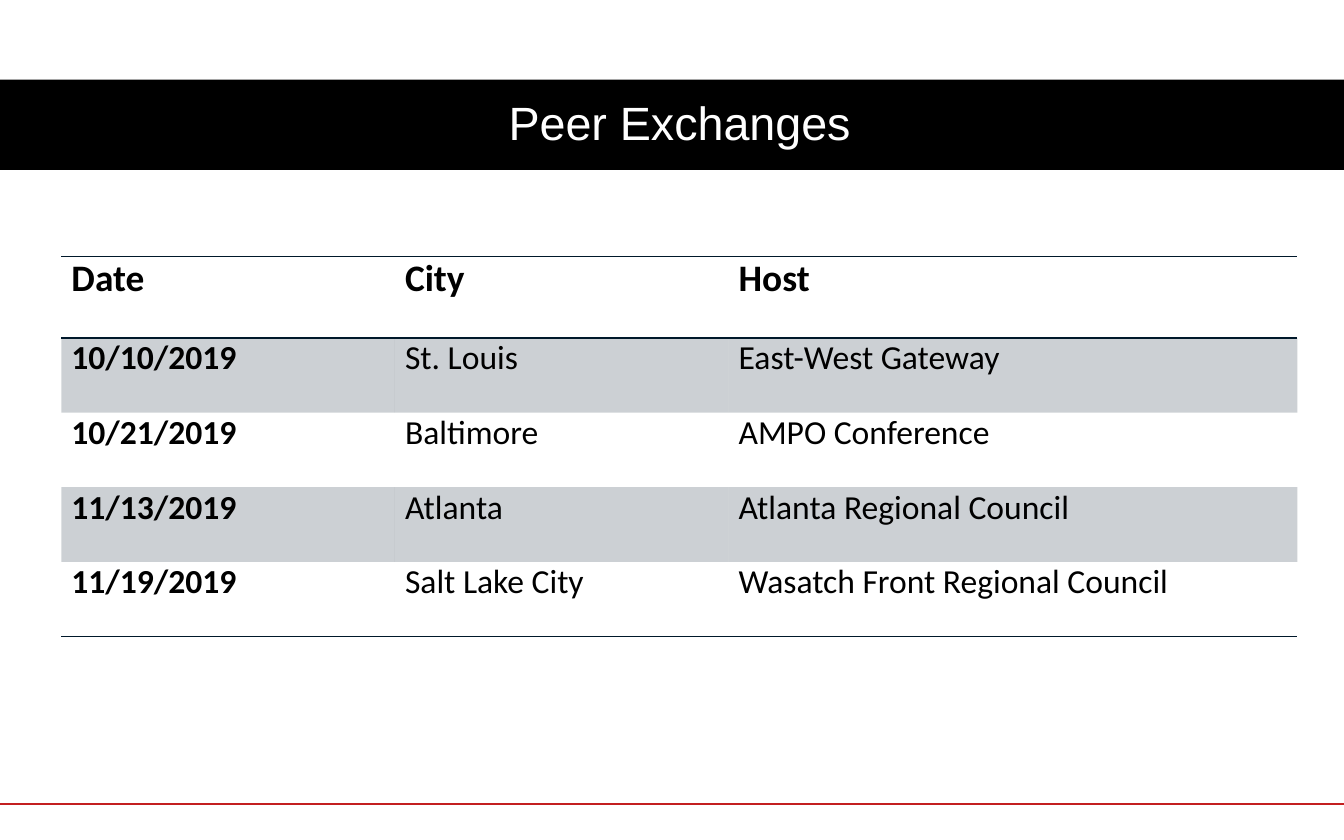
from lxml import etree
from pptx import Presentation
from pptx.dml.color import RGBColor
from pptx.enum import shapes, text
from pptx.oxml.ns import qn
from pptx.util import Pt

TITLE = "Peer Exchanges"
ROWS = [
    ("Date", "City", "Host"),
    ("10/10/2019", "St. Louis", "East-West Gateway"),
    ("10/21/2019", "Baltimore", "AMPO Conference"),
    ("11/13/2019", "Atlanta", "Atlanta Regional Council"),
    ("11/19/2019", "Salt Lake City", "Wasatch Front Regional Council"),
]
COLUMN_WIDTHS = [178.7, 178.7, 304.8]
ROW_HEIGHTS = [43.7] + [40] * 4
SLIDE_WIDTH, SLIDE_HEIGHT = 720, 450
LEFT, TABLE_TOP = 32.9, 137.3
BAR_TOP, BAR_HEIGHT = 42.7, 48.4
RULE_Y = 430.6
BLACK, WHITE, NAVY, RED = "000000", "FFFFFF", "00182A", "C31F20"


def color(value):
    return RGBColor.from_string(value)


def write(frame, words, align, **font):
    para = frame.paragraphs[0]
    para.alignment = align
    span = para.add_run()
    span.text = words
    span.font.color.rgb = color(font.pop("color"))
    for name, value in font.items():
        setattr(span.font, name, value)
    return para


def set_borders(cell, ruled):
    """Draw navy lines on the ruled sides and clear the others."""
    properties = cell._tc.get_or_add_tcPr()
    for place, side in enumerate("LRTB"):
        line = etree.Element(qn(f"a:ln{side}"), w=str(Pt(1)))
        if side in ruled:
            fill = etree.SubElement(line, qn("a:solidFill"))
            etree.SubElement(fill, qn("a:srgbClr"), val=NAVY)
        else:
            etree.SubElement(line, qn("a:noFill"))
        properties.insert(place, line)


def shade(cell, opacity):
    cell.fill.solid()
    cell.fill.fore_color.rgb = color(NAVY)
    tint = cell._tc.tcPr.find(".//" + qn("a:srgbClr"))
    etree.SubElement(tint, qn("a:alpha"), val=str(opacity * 1000))


def add_rule(page):
    rule = page.shapes.add_connector(
        shapes.MSO_CONNECTOR.STRAIGHT, 0, Pt(RULE_Y), Pt(SLIDE_WIDTH), Pt(RULE_Y))
    rule.line.color.rgb = color(RED)
    rule.line.width = Pt(1)
    etree.SubElement(rule._element.spPr, qn("a:effectLst"))


def add_title(page):
    bar = page.shapes.add_shape(
        shapes.MSO_SHAPE.RECTANGLE, 0, Pt(BAR_TOP), Pt(SLIDE_WIDTH), Pt(BAR_HEIGHT))
    bar.shadow.inherit = False
    bar.fill.solid()
    bar.fill.fore_color.rgb = color(BLACK)
    bar.line.fill.background()

    box = page.shapes.add_textbox(
        Pt(LEFT), Pt(BAR_TOP), Pt(sum(COLUMN_WIDTHS)), Pt(BAR_HEIGHT))
    box.text_frame.word_wrap = True
    box.text_frame.vertical_anchor = text.MSO_ANCHOR.MIDDLE
    para = write(box.text_frame, TITLE, text.PP_ALIGN.CENTER,
                 name="Arial", size=Pt(25), color=WHITE)
    para.line_spacing = 0.9


def add_schedule(page):
    frame = page.shapes.add_table(
        len(ROWS), len(COLUMN_WIDTHS), Pt(LEFT), Pt(TABLE_TOP),
        Pt(sum(COLUMN_WIDTHS)), Pt(sum(ROW_HEIGHTS)))
    table = frame.table
    table.first_row = table.horz_banding = False
    for column, width in zip(table.columns, COLUMN_WIDTHS):
        column.width = Pt(width)
    for row, height in zip(table.rows, ROW_HEIGHTS):
        row.height = Pt(height)

    margins = dict(margin_left=5.4, margin_right=5.4, margin_top=0, margin_bottom=0)
    ruled_sides = {0: "TB", 1: "T", len(ROWS) - 1: "B"}
    for r, entries in enumerate(ROWS):
        for c, words in enumerate(entries):
            cell = table.cell(r, c)
            for name, value in margins.items():
                setattr(cell, name, Pt(value))
            para = write(cell.text_frame, words, text.PP_ALIGN.LEFT,
                         name="Calibri", size=Pt(18 if r else 20),
                         bold=r == 0 or c == 0, color=BLACK)
            para.space_after = Pt(6)
            if r % 2:
                shade(cell, 20)
            else:
                cell.fill.background()
            set_borders(cell, ruled_sides.get(r, ""))


def main():
    deck = Presentation()
    deck.slide_width, deck.slide_height = Pt(SLIDE_WIDTH), Pt(SLIDE_HEIGHT)
    page = deck.slides.add_slide(deck.slide_layouts[6])
    add_rule(page)
    add_title(page)
    add_schedule(page)
    deck.save("out.pptx")


if __name__ == "__main__":
    main()
